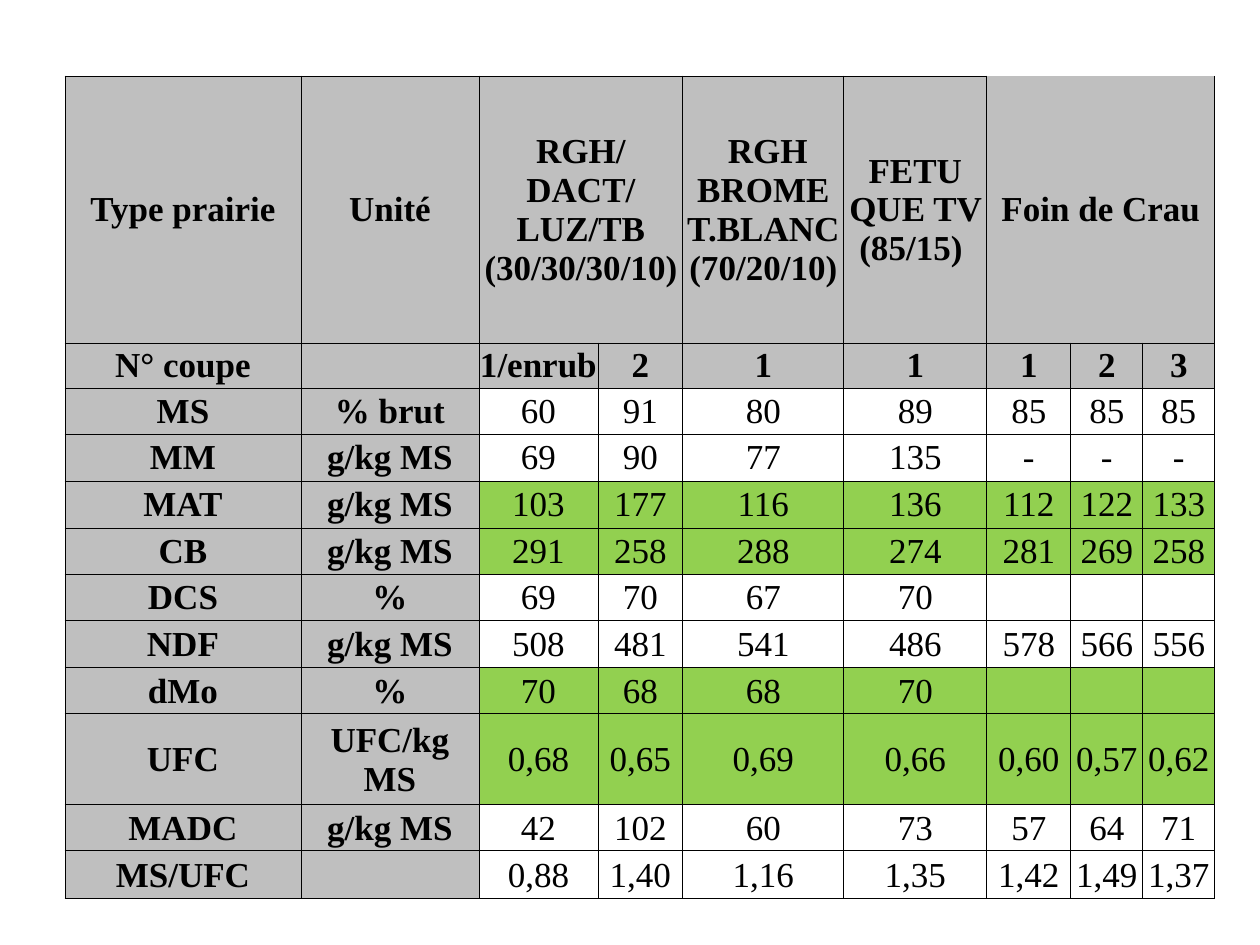
from typing import NamedTuple

from lxml.etree import SubElement
from pptx import Presentation
from pptx.dml.color import RGBColor
from pptx.enum.text import MSO_ANCHOR as Anchor, PP_ALIGN as Align
from pptx.oxml.ns import qn
from pptx.util import Emu, Pt

GREY, GREEN, WHITE, BLACK = "BFBFBF", "92D050", "FFFFFF", "000000"
LABEL_COLUMNS = 2
HEADER_ROWS = 2
HAY_COLUMN = 6
LINE_WIDTH = Pt(0.5)


class TableRow(NamedTuple):
    height: int
    texts: list[str]
    fill: str = WHITE


COLUMN_WIDTHS = [236, 178, 119, 85, 161, 143, 84, 72, 72]
ROWS = [
    TableRow(267, ["Type prairie", "Unité", "RGH/ DACT/ LUZ/TB (30/30/30/10)", "",
                   " RGH BROME T.BLANC (70/20/10)", "FETU QUE TV (85/15) ",
                   "Foin de Crau", "", ""], GREY),
    TableRow(45, ["N° coupe", "", "1/enrub", "2", "1", "1", "1", "2", "3"], GREY),
    TableRow(46, ["MS", "% brut", "60", "91", "80", "89", "85", "85", "85"]),
    TableRow(47, ["MM", "g/kg MS", "69", "90", "77", "135", "-", "-", "-"]),
    TableRow(47, ["MAT", "g/kg MS", "103", "177", "116", "136", "112", "122", "133"], GREEN),
    TableRow(46, ["CB", "g/kg MS", "291", "258", "288", "274", "281", "269", "258"], GREEN),
    TableRow(47, ["DCS", "%", "69", "70", "67", "70", "", "", ""]),
    TableRow(47, ["NDF", "g/kg MS", "508", "481", "541", "486", "578", "566", "556"]),
    TableRow(46, ["dMo", "%", "70", "68", "68", "70", "", "", ""], GREEN),
    TableRow(91, ["UFC", "UFC/kg MS", "0,68", "0,65", "0,69", "0,66", "0,60", "0,57", "0,62"],
             GREEN),
    TableRow(46, ["MADC", "g/kg MS", "42", "102", "60", "73", "57", "64", "71"]),
    TableRow(48, ["MS/UFC", "", "0,88", "1,40", "1,16", "1,35", "1,42", "1,49", "1,37"]),
]


def px(length: int) -> Emu:
    return Emu(round(length * 914400 / 126))


def rgb(value: str) -> RGBColor:
    return RGBColor.from_string(value)


def set_borders(cell, open_top: bool) -> None:
    """Draw thin black edges, leaving out the top one if it is open."""
    properties = cell._tc.get_or_add_tcPr()
    for side in "LRTB":
        line = SubElement(properties, qn(f"a:ln{side}"), w=str(LINE_WIDTH))
        if side == "T" and open_top:
            SubElement(line, qn("a:noFill"))
        else:
            fill = SubElement(line, qn("a:solidFill"))
            SubElement(fill, qn("a:srgbClr"), val=BLACK)


def fill_cell(cell, text: str, fill: str, bold: bool, open_top: bool) -> None:
    set_borders(cell, open_top)
    cell.fill.solid()
    cell.fill.fore_color.rgb = rgb(fill)
    cell.margin_left = cell.margin_right = cell.margin_top = px(1)
    cell.margin_bottom = 0
    cell.vertical_anchor = Anchor.MIDDLE
    cell.text = text
    para = cell.text_frame.paragraphs[0]
    para.alignment = Align.CENTER
    para.font.name = "Times New Roman"
    para.font.size = Pt(20)
    para.font.bold = bold
    para.font.color.rgb = rgb(BLACK)


def add_forage_table(page) -> None:
    table = page.shapes.add_table(
        len(ROWS), len(COLUMN_WIDTHS), px(65), px(76),
        px(sum(COLUMN_WIDTHS)), px(sum(row.height for row in ROWS))).table
    table.first_row = table.horz_banding = False
    for column, width in zip(table.columns, COLUMN_WIDTHS):
        column.width = px(width)
    for r, row in enumerate(ROWS):
        table.rows[r].height = px(row.height)
        for c, text in enumerate(row.texts):
            is_label = c < LABEL_COLUMNS
            fill_cell(table.cell(r, c), text, GREY if is_label else row.fill,
                      bold=is_label or r < HEADER_ROWS,
                      open_top=r == 0 and c >= HAY_COLUMN)
    for first, last in ((2, 3), (HAY_COLUMN, 8)):
        table.cell(0, first).merge(table.cell(0, last))


def main() -> None:
    deck = Presentation()
    deck.slide_width, deck.slide_height = px(1260), px(945)
    add_forage_table(deck.slides.add_slide(deck.slide_layouts[6]))
    deck.save("out.pptx")


if __name__ == "__main__":
    main()
